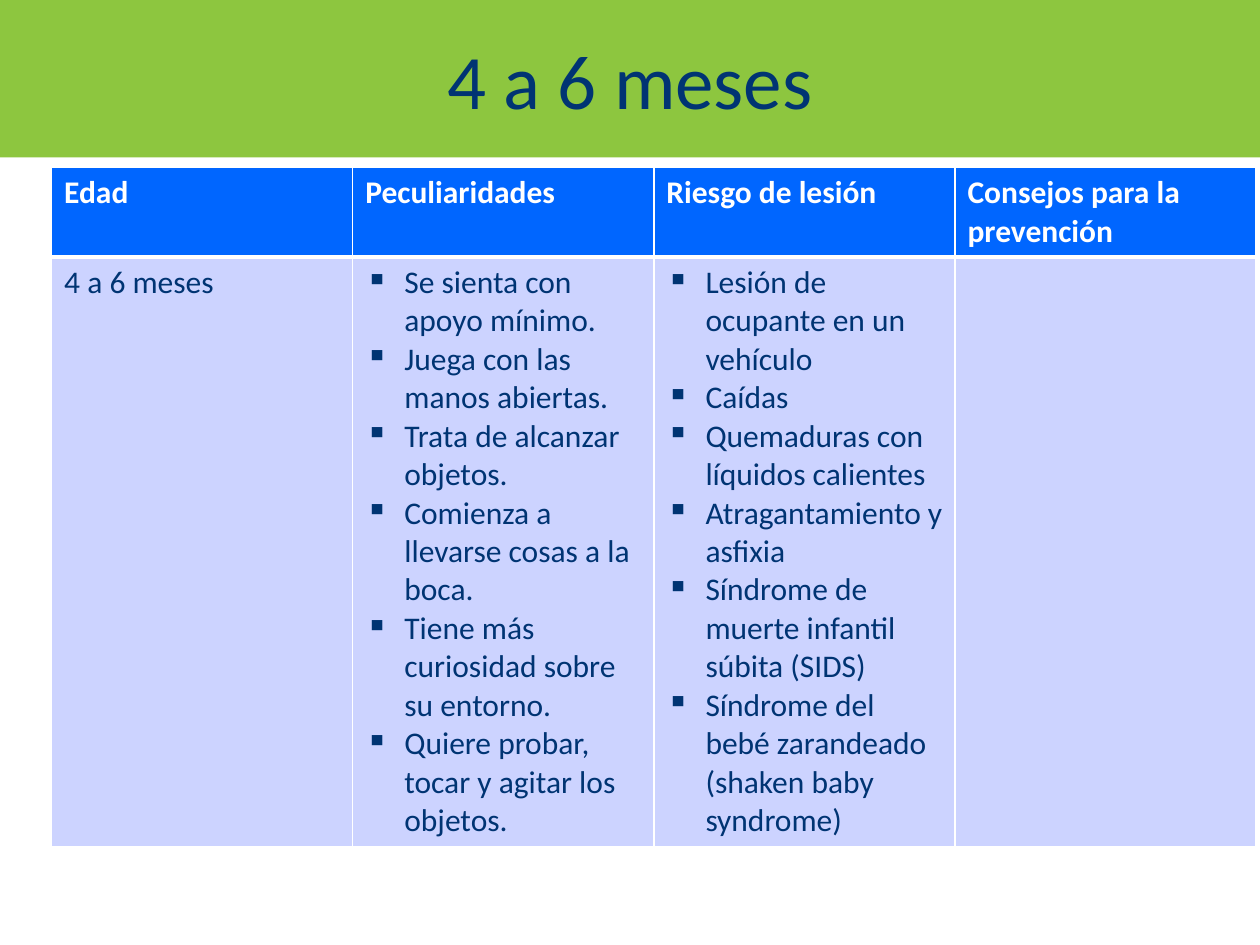
import dataclasses

import lxml.etree
import pptx
import pptx.dml.color
import pptx.enum.text
import pptx.oxml.ns
import pptx.util

Inches = pptx.util.Inches
Pt = pptx.util.Pt


@dataclasses.dataclass(frozen=True)
class Theme:
    font: str = "Calibri"
    title_size: int = 44
    table_size: int = 18
    banner: str = "8DC63F"
    text: str = "003473"
    header_text: str = "FFFFFF"
    header_fill: str = "0066FF"
    body_fill: str = "CCD3FF"
    border: str = "FFFFFF"


HEADERS = ["Edad", "Peculiaridades", "Riesgo de lesión", "Consejos para la prevención"]
AGE = "4 a 6 meses"
TRAITS = [
    "Se sienta con apoyo mínimo.",
    "Juega con las manos abiertas.",
    "Trata de alcanzar objetos.",
    "Comienza a llevarse cosas a la boca.",
    "Tiene más curiosidad sobre su entorno.",
    "Quiere probar, tocar y agitar los objetos.",
]
RISKS = [
    "Lesión de ocupante en un vehículo",
    "Caídas",
    "Quemaduras con líquidos calientes",
    "Atragantamiento y asfixia",
    "Síndrome de muerte infantil súbita (SIDS)",
    "Síndrome del bebé zarandeado (shaken baby syndrome)",
]


def color(value):
    return pptx.dml.color.RGBColor.from_string(value)


def add_element(parent, tag, **attributes):
    return lxml.etree.SubElement(parent, pptx.oxml.ns.qn(tag), attributes)


class SlideBuilder:
    def __init__(self, slide, theme):
        self.slide = slide
        self.theme = theme

    def format_runs(self, paragraph, size, text_color, bold=False):
        for run in paragraph.runs:
            run.font.name = self.theme.font
            run.font.size = Pt(size)
            run.font.bold = bold
            run.font.color.rgb = color(text_color)

    def add_title(self, text, left, top, width, height):
        title = self.slide.shapes.title
        title.left, title.top = Inches(left), Inches(top)
        title.width, title.height = Inches(width), Inches(height)
        title.fill.solid()
        title.fill.fore_color.rgb = color(self.theme.banner)
        title.text_frame.text = text
        title.text_frame.vertical_anchor = pptx.enum.text.MSO_ANCHOR.MIDDLE
        paragraph = title.text_frame.paragraphs[0]
        paragraph.alignment = pptx.enum.text.PP_ALIGN.CENTER
        self.format_runs(paragraph, self.theme.title_size, self.theme.text)

    def add_bullet(self, paragraph):
        properties = paragraph._p.get_or_add_pPr()
        indent = Inches(0.31)
        properties.set("marL", str(indent))
        properties.set("indent", str(-indent))
        add_element(properties, "a:buChar", char="▪")

    def add_borders(self, cell, bottom_width):
        properties = cell._tc.get_or_add_tcPr()
        widths = {"a:lnL": 1, "a:lnR": 1, "a:lnT": 1, "a:lnB": bottom_width}
        for tag, width in widths.items():
            line = add_element(properties, tag, w=str(Pt(width)))
            fill = add_element(line, "a:solidFill")
            add_element(fill, "a:srgbClr", val=self.theme.border)

    def fill_cell(self, cell, lines, header=False, bulleted=False):
        theme = self.theme
        self.add_borders(cell, 3 if header else 1)
        cell.fill.solid()
        cell.fill.fore_color.rgb = color(theme.header_fill if header else theme.body_fill)
        cell.text_frame.text = "\n".join(lines)
        for paragraph in cell.text_frame.paragraphs:
            if bulleted:
                self.add_bullet(paragraph)
            text_color = theme.header_text if header else theme.text
            self.format_runs(paragraph, theme.table_size, text_color, header)

    def add_table(self, headers, body, left, top, column_width, row_heights):
        frame = self.slide.shapes.add_table(
            2, len(headers), Inches(left), Inches(top),
            Inches(column_width * len(headers)), Inches(sum(row_heights)))
        table = frame.table
        for row, height in zip(table.rows, row_heights):
            row.height = Inches(height)
        for index, (header, lines) in enumerate(zip(headers, body)):
            table.columns[index].width = Inches(column_width)
            self.fill_cell(table.cell(0, index), [header], header=True)
            self.fill_cell(table.cell(1, index), lines, bulleted=len(lines) > 1)


def main():
    presentation = pptx.Presentation()
    presentation.slide_width = Inches(10)
    presentation.slide_height = Inches(7.5)
    slide = presentation.slides.add_slide(presentation.slide_layouts[5])
    builder = SlideBuilder(slide, Theme())

    # Title banner
    builder.add_title(AGE, 0, 0, 10, 1.25)

    # Age table, with the prevention column left open
    builder.add_table(HEADERS, [[AGE], TRAITS, RISKS, []], 0.41, 1.33, 2.39, [0.7, 4.67])

    presentation.save("out.pptx")


if __name__ == "__main__":
    main()
